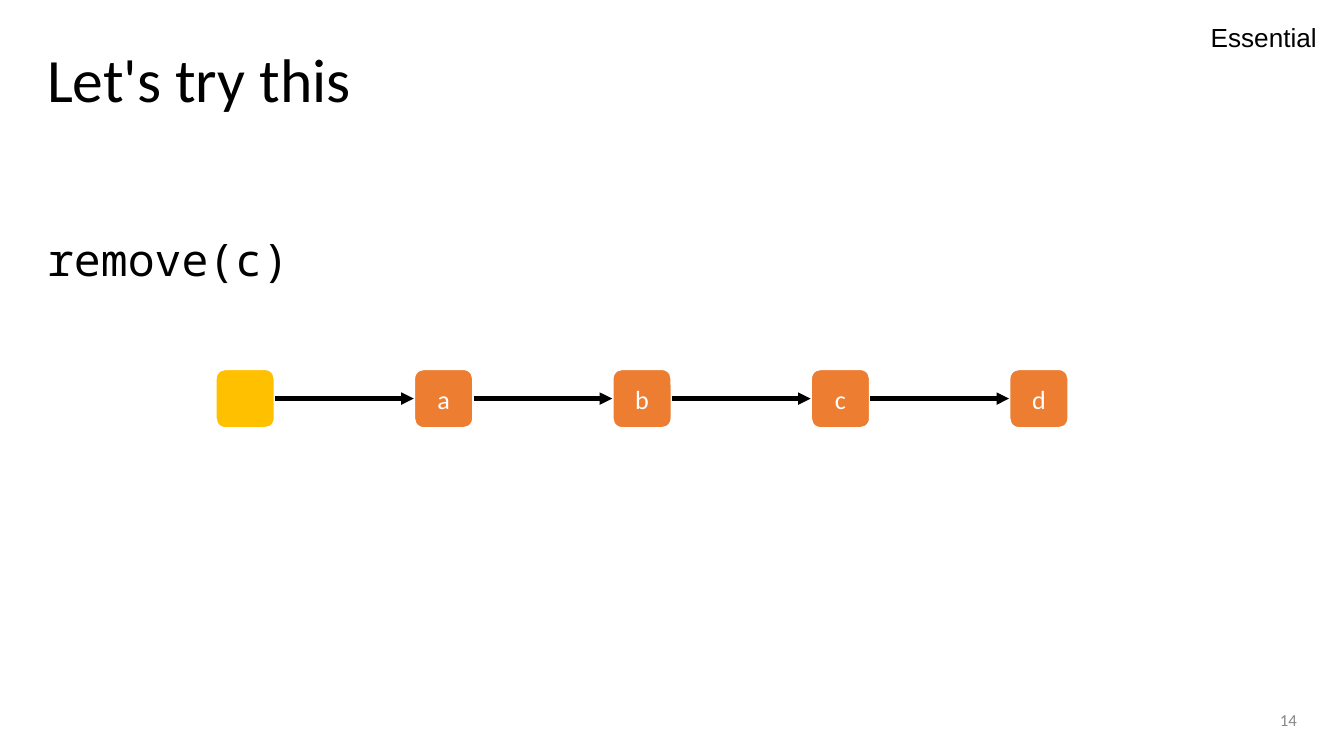
from pptx import Presentation
from pptx.dml.color import RGBColor
from pptx.enum.shapes import MSO_CONNECTOR, MSO_SHAPE
from pptx.enum.text import MSO_ANCHOR, MSO_AUTO_SIZE, PP_ALIGN
from pptx.oxml.ns import qn
from pptx.util import Cm, Pt
from lxml import etree

LEFT, CENTER, RIGHT = PP_ALIGN.LEFT, PP_ALIGN.CENTER, PP_ALIGN.RIGHT
TOP, MIDDLE = MSO_ANCHOR.TOP, MSO_ANCHOR.MIDDLE

# Linked list geometry, in centimetres
NODE_LEFT, NODE_TOP = 4.07, 6.97
NODE_SIZE, NODE_PITCH = 1.13, 3.75


def color(hex_value):
    return RGBColor.from_string(hex_value)


def place(shape, left, top, width, height):
    shape.left, shape.top = Cm(left), Cm(top)
    shape.width, shape.height = Cm(width), Cm(height)


def write(shape, text, size, font="Calibri", ink="000000", align=LEFT,
          anchor=MIDDLE, wrap=True, spacing=1.0, insets=(0.18, 0.1, 0.18, 0.1)):
    frame = shape.text_frame
    frame.auto_size = MSO_AUTO_SIZE.NONE if wrap else MSO_AUTO_SIZE.SHAPE_TO_FIT_TEXT
    frame.word_wrap = wrap
    frame.vertical_anchor = anchor
    (frame.margin_left, frame.margin_top,
     frame.margin_right, frame.margin_bottom) = map(Cm, insets)
    paragraph = frame.paragraphs[0]
    paragraph.alignment = align
    paragraph.line_spacing = spacing
    paragraph.space_before = Pt(0)
    run = paragraph.add_run()
    run.text = text
    run.font.size = Pt(size)
    run.font.name = font
    run.font.color.rgb = color(ink)


def remove_bullet(paragraph):
    properties = paragraph._p.get_or_add_pPr()
    properties.set("marL", "0")
    properties.set("indent", "0")
    etree.SubElement(properties, qn("a:buNone"))


def add_label(slide, text, box, **style):
    label = slide.shapes.add_textbox(*map(Cm, box))
    write(label, text, **style)


def add_node(slide, left, fill, text):
    node = slide.shapes.add_shape(MSO_SHAPE.ROUNDED_RECTANGLE, Cm(left),
                                  Cm(NODE_TOP), Cm(NODE_SIZE), Cm(NODE_SIZE))
    node.shadow.inherit = False
    node.fill.solid()
    node.fill.fore_color.rgb = color(fill)
    node.line.color.rgb = color("FFFFFF")
    node.line.width = Pt(1.5)
    if text:
        write(node, text, 14, ink="FFFFFF", align=CENTER)
    return node


def add_arrow(slide, source, target):
    arrow = slide.shapes.add_connector(MSO_CONNECTOR.STRAIGHT, 0, 0, 0, 0)
    arrow.begin_connect(source, 3)
    arrow.end_connect(target, 1)
    arrow.line.color.rgb = color("000000")
    arrow.line.width = Pt(2.25)
    etree.SubElement(arrow.line._get_or_add_ln(), qn("a:tailEnd"), type="triangle")
    etree.SubElement(arrow._element.spPr, qn("a:effectLst"))


def main():
    deck = Presentation()
    deck.slide_width, deck.slide_height = Cm(25.4), Cm(14.29)
    slide = deck.slides.add_slide(deck.slide_layouts[1])

    # Title and operation
    title, operation = slide.placeholders
    place(title, 0.71, 0.38, 23.98, 2.36)
    write(title, "Let's try this", 33, spacing=0.9)
    place(operation, 0.71, 3.18, 23.98, 9.75)
    write(operation, "remove(c)", 24, font="Noto Sans Mono", anchor=TOP,
          spacing=0.9, insets=(0.18, 1.32, 0.18, 0.1))
    remove_bullet(operation.text_frame.paragraphs[0])

    # Slide number
    add_label(slide, "14", (17.93, 13.23, 6.76, 0.76),
              size=9, ink="888888", align=RIGHT)

    # Linked list: an empty head followed by the values
    nodes = [add_node(slide, NODE_LEFT + i * NODE_PITCH,
                      "ED7D31" if value else "FFC000", value)
             for i, value in enumerate(["", "a", "b", "c", "d"])]
    for source, target in zip(nodes, nodes[1:]):
        add_arrow(slide, source, target)

    # Importance tag
    add_label(slide, "Essential", (22.63, 0.28, 2.54, 0.86), size=14, font="Arial",
              anchor=TOP, wrap=False, insets=(0.25, 0.13, 0.25, 0.13))

    deck.save("out.pptx")


if __name__ == "__main__":
    main()
